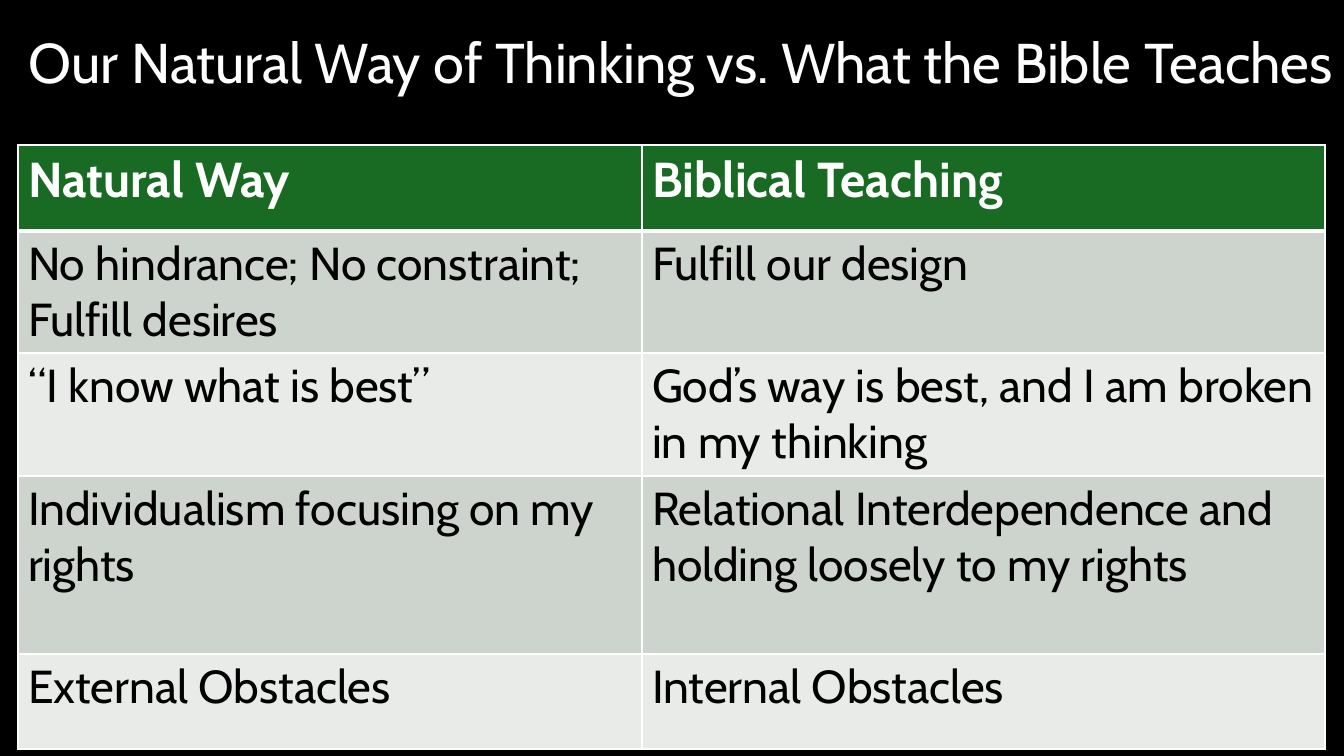
from dataclasses import dataclass

from lxml import etree
from pptx import Presentation
from pptx.dml.color import RGBColor
from pptx.enum.text import MSO_ANCHOR, PP_ALIGN
from pptx.oxml.ns import qn
from pptx.util import Emu, Pt

MIDDLE = MSO_ANCHOR.MIDDLE
LEFT = PP_ALIGN.LEFT

PAGE_WIDTH, PAGE_HEIGHT = 1344, 756
EMU_PER_PX = 12192000 / PAGE_WIDTH
FONT_NAME = "Cabin"

BLACK = RGBColor(0x00, 0x00, 0x00)
WHITE = RGBColor(0xFF, 0xFF, 0xFF)
GREEN = RGBColor(0x19, 0x6B, 0x24)
SAGE = RGBColor(0xCC, 0xD4, 0xCD)
PALE = RGBColor(0xE8, 0xEB, 0xE8)

TITLE = "Our Natural Way of Thinking vs. What the Bible Teaches"
TITLE_FORMAT = {"size": Pt(40), "bold": False}
HEADER_FORMAT = {"size": Pt(35), "bold": True}
BODY_FORMAT = {"size": Pt(33), "bold": False}

TABLE_LEFT, TABLE_TOP = 18, 145
COLUMN_WIDTHS = (624, 683)
THIN, THICK = Pt(1), Pt(3)


@dataclass(frozen=True)
class Comparison:
    natural: str
    biblical: str
    height: int


COMPARISONS = (
    Comparison("Natural Way", "Biblical Teaching", 86),
    Comparison("No hindrance; No constraint; Fulfill desires", "Fulfill our design", 122),
    Comparison("“I know what is best”", "God’s way is best, and I am broken in my thinking", 123),
    Comparison("Individualism focusing on my rights",
               "Relational Interdependence and holding loosely to my rights", 178),
    Comparison("External Obstacles", "Internal Obstacles", 95),
)


def px(length: int) -> Emu:
    return Emu(round(length * EMU_PER_PX))


def write_text(frame, text: str, color: RGBColor, font_format: dict) -> None:
    para = frame.paragraphs[0]
    para.alignment = LEFT
    span = para.add_run()
    span.text = text
    span.font.name = FONT_NAME
    span.font.color.rgb = color
    for name, value in font_format.items():
        setattr(span.font, name, value)


def add_borders(cell, top: int, bottom: int) -> None:
    """Draw white cell borders; the top and bottom widths may differ from the sides."""
    properties = cell._tc.get_or_add_tcPr()
    widths = {"a:lnL": THIN, "a:lnR": THIN, "a:lnT": top, "a:lnB": bottom}
    for position, (tag, width) in enumerate(widths.items()):
        line = etree.Element(qn(tag), w=str(int(width)))
        fill = etree.SubElement(line, qn("a:solidFill"))
        etree.SubElement(fill, qn("a:srgbClr"), val=str(WHITE))
        properties.insert(position, line)


def add_title(page) -> None:
    box = page.shapes.add_textbox(px(19), px(17), px(1325), px(97))
    frame = box.text_frame
    frame.word_wrap = True
    frame.vertical_anchor = MIDDLE
    frame.margin_right = 0
    frame.paragraphs[0].line_spacing = 0.9
    write_text(frame, TITLE, WHITE, TITLE_FORMAT)


def add_comparison_table(page) -> None:
    total_height = sum(comparison.height for comparison in COMPARISONS)
    table = page.shapes.add_table(
        len(COMPARISONS), len(COLUMN_WIDTHS), px(TABLE_LEFT), px(TABLE_TOP),
        px(sum(COLUMN_WIDTHS)), px(total_height)).table
    table.horz_banding = False
    for column, width in zip(table.columns, COLUMN_WIDTHS):
        column.width = px(width)
    for index, (row, comparison) in enumerate(zip(table.rows, COMPARISONS)):
        row.height = px(comparison.height)
        is_header = index == 0
        background = GREEN if is_header else (PALE, SAGE)[index % 2]
        for cell, text in zip(row.cells, (comparison.natural, comparison.biblical)):
            cell.fill.solid()
            cell.fill.fore_color.rgb = background
            add_borders(cell, THICK if index == 1 else THIN, THICK if is_header else THIN)
            write_text(cell.text_frame, text, WHITE if is_header else BLACK,
                       HEADER_FORMAT if is_header else BODY_FORMAT)


def main() -> None:
    deck = Presentation()
    deck.slide_width = px(PAGE_WIDTH)
    deck.slide_height = px(PAGE_HEIGHT)
    page = deck.slides.add_slide(deck.slide_layouts[6])
    page.background.fill.solid()
    page.background.fill.fore_color.rgb = BLACK
    add_title(page)
    add_comparison_table(page)
    deck.save("out.pptx")


if __name__ == "__main__":
    main()
